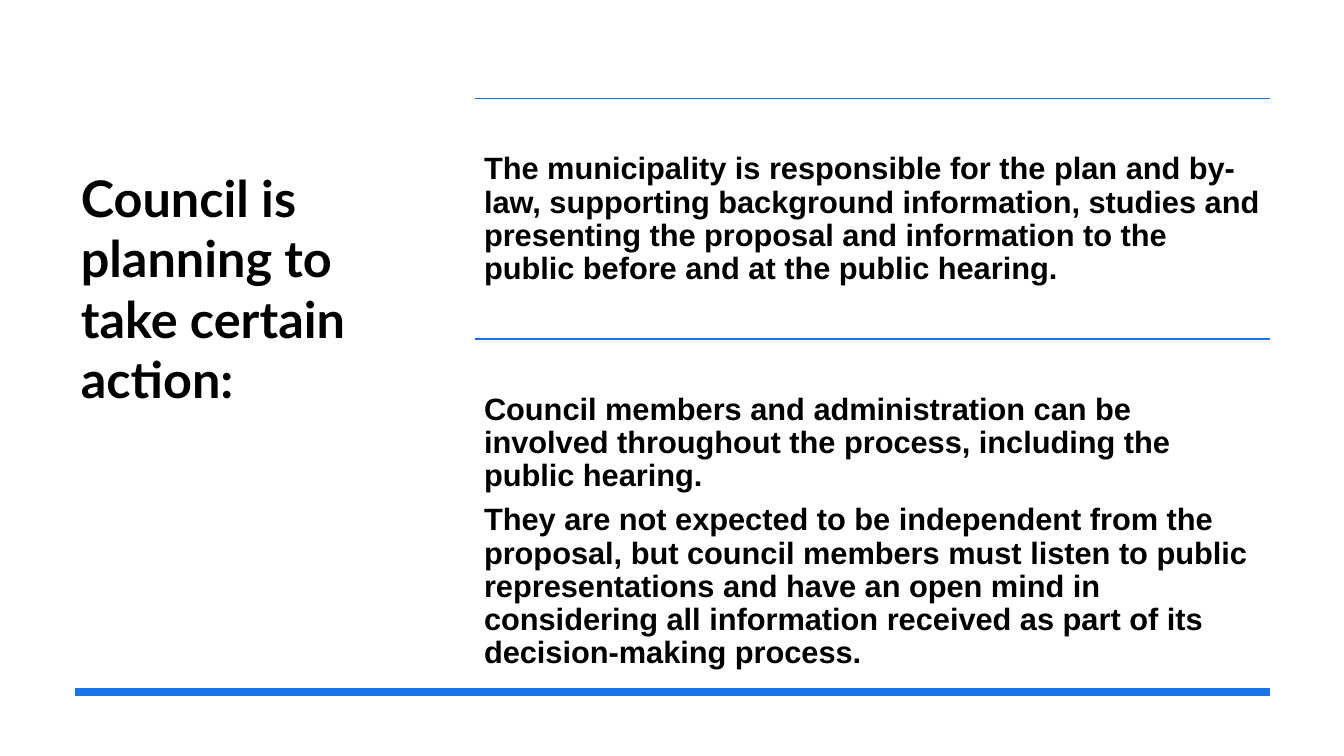
import pptx
import pptx.util
import pptx.dml.color
import pptx.enum.shapes
import pptx.enum.text
import pptx.oxml

PX = 9525  # EMU in one px, 96 px to the inch
BLUE = pptx.dml.color.RGBColor(0x19, 0x73, 0xEB)
BLACK = pptx.dml.color.RGBColor(0, 0, 0)

RIGHT_EDGE = 1210
BODY_LEFT = 452
TITLE = "Council is planning to take certain action:"
# Top, height and paragraphs of each section
SECTIONS = [
    (94, 229, [
        "The municipality is responsible for the plan and by-law, supporting "
        "background information, studies and presenting the proposal and "
        "information to the public before and at the public hearing.",
    ]),
    (323, 306, [
        "Council members and administration can be involved throughout the "
        "process, including the public hearing.",
        "They are not expected to be independent from the proposal, but council "
        "members must listen to public representations and have an open mind in "
        "considering all information received as part of its decision-making "
        "process.",
    ]),
]


def px(length):
    return pptx.util.Emu(length * PX)


def add_text(page, texts, left, top, width, height, *, font, size,
             inset=9, inset_top=9, spacing=1.0, after=0):
    box = page.shapes.add_textbox(px(left), px(top), px(width), px(height))
    frame = box.text_frame
    frame.word_wrap = True
    frame.vertical_anchor = pptx.enum.text.MSO_ANCHOR.TOP
    frame.margin_left = frame.margin_right = frame.margin_bottom = px(inset)
    frame.margin_top = px(inset_top)
    for index, text in enumerate(texts):
        para = frame.add_paragraph() if index else frame.paragraphs[0]
        para.line_spacing = spacing
        para.space_after = pptx.util.Pt(after)
        span = para.add_run()
        span.text = text
        span.font.name = font
        span.font.size = pptx.util.Pt(size)
        span.font.bold = True
        span.font.color.rgb = BLACK


def add_rule(page, left, top, weight):
    rule = page.shapes.add_connector(
        pptx.enum.shapes.MSO_CONNECTOR.STRAIGHT,
        px(left), px(top), px(RIGHT_EDGE), px(top))
    rule.line.color.rgb = BLUE
    rule.line.width = pptx.util.Pt(weight)
    rule._element.spPr.append(pptx.oxml.parse_xml(
        '<a:effectLst xmlns:a="http://schemas.openxmlformats.org/drawingml/2006/main"/>'))


def main():
    deck = pptx.Presentation()
    deck.slide_width, deck.slide_height = px(1280), px(720)
    page = deck.slides.add_slide(deck.slide_layouts[6])

    # Title and bottom bar
    add_text(page, [TITLE], 67, 96, 315, 437, font="Lato", size=36,
             inset=10, inset_top=63)
    add_rule(page, 71, 659, 6)

    # Sections, each under a thin rule
    for top, height, texts in SECTIONS:
        add_rule(page, BODY_LEFT, top, 1)
        add_text(page, texts, BODY_LEFT, top, RIGHT_EDGE - BODY_LEFT, height,
                 font="Arial", size=22, inset_top=52, spacing=0.9, after=7.7)

    deck.save("out.pptx")


if __name__ == "__main__":
    main()
